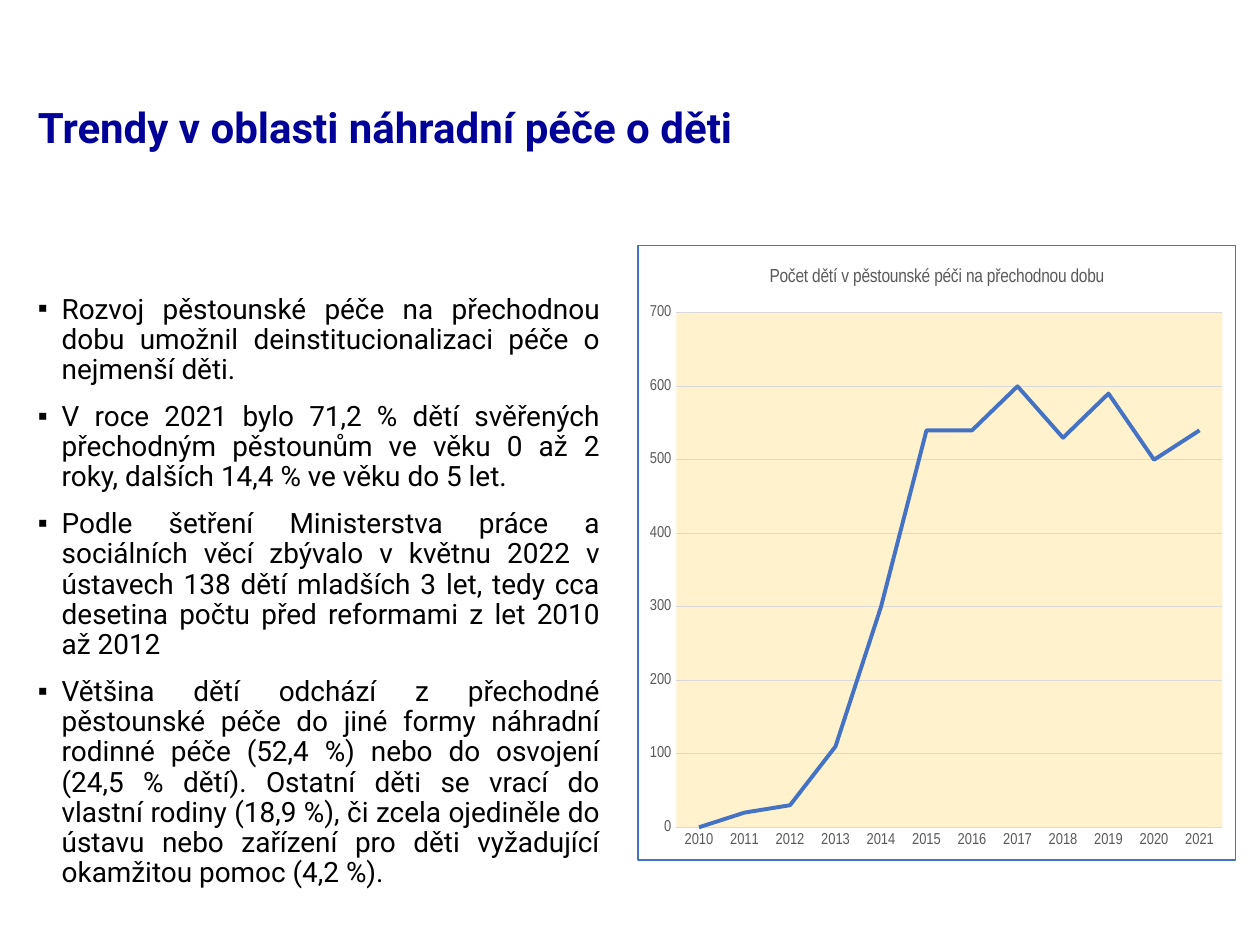
from dataclasses import dataclass

import pptx
import pptx.chart.data
import pptx.dml.color
import pptx.enum.chart
import pptx.enum.text
import pptx.oxml
import pptx.oxml.ns
import pptx.util
from pptx.util import Cm, Pt

COLORS = {
    "title": "000099",
    "text": "000000",
    "line": "4472C4",
    "plot": "FFF2CC",
    "grid": "D9D9D9",
    "label": "595959",
}
TEXT_FONT = "Roboto"
CHART_FONT = "Arial Narrow"


@dataclass
class Box:
    left: float
    top: float
    width: float
    height: float

    def lengths(self) -> tuple:
        return Cm(self.left), Cm(self.top), Cm(self.width), Cm(self.height)


TITLE_BOX = Box(0.51, 1.7, 21.44, 1.83)
BODY_BOX = Box(0.51, 5.82, 11.84, 11.18)
CHART_BOX = Box(12.85, 4.93, 12.07, 12.42)

TITLE = "Trendy v oblasti náhradní péče o děti"
BULLETS = [
    "Rozvoj pěstounské péče na přechodnou dobu umožnil "
    "deinstitucionalizaci péče o nejmenší děti.",
    "V roce 2021 bylo 71,2 % dětí svěřených přechodným pěstounům "
    "ve věku 0 až 2 roky, dalších 14,4 % ve věku do 5 let.",
    "Podle šetření Ministerstva práce a sociálních věcí zbývalo "
    "v květnu 2022 v ústavech 138 dětí mladších 3 let, tedy cca "
    "desetina počtu před reformami z let 2010 až 2012",
    "Většina dětí odchází z přechodné pěstounské péče do jiné formy "
    "náhradní rodinné péče (52,4 %) nebo do osvojení (24,5 % dětí). "
    "Ostatní děti se vrací do vlastní rodiny (18,9 %), či zcela ojediněle "
    "do ústavu nebo zařízení pro děti vyžadující okamžitou pomoc (4,2 %).",
]
CHART_TITLE = "Počet dětí v pěstounské péči na přechodnou dobu"
CHILDREN = [0, 20, 30, 110, 300, 540, 540, 600, 530, 590, 500, 540]


def color(name: str) -> pptx.dml.color.RGBColor:
    return pptx.dml.color.RGBColor.from_string(COLORS[name])


def set_font(font, name: str, size: float, color_name: str, bold: bool = False) -> None:
    font.name, font.size, font.bold = name, Pt(size), bold
    font.color.rgb = color(color_name)


def set_line(line, color_name: str, width: float) -> None:
    line.color.rgb = color(color_name)
    line.width = Pt(width)


def place(shape, box: Box) -> None:
    shape.left, shape.top, shape.width, shape.height = box.lengths()
    shape.text_frame.word_wrap = True
    shape.text_frame.auto_size = pptx.enum.text.MSO_AUTO_SIZE.NONE


def add_bullet(paragraph) -> None:
    properties = paragraph._p.get_or_add_pPr()
    properties.set("marL", str(Cm(0.48)))
    properties.set("indent", str(-Cm(0.48)))
    bullet = pptx.oxml.parse_xml(f'<a:buChar {pptx.oxml.ns.nsdecls("a")} char="▪"/>')
    properties.append(bullet)


def fill_title(shape) -> None:
    place(shape, TITLE_BOX)
    shape.text_frame.vertical_anchor = pptx.enum.text.MSO_ANCHOR.MIDDLE
    shape.text_frame.text = TITLE
    paragraph = shape.text_frame.paragraphs[0]
    paragraph.alignment = pptx.enum.text.PP_ALIGN.LEFT
    paragraph.line_spacing = 0.9
    set_font(paragraph.font, TEXT_FONT, 24, "title", bold=True)


def fill_body(shape) -> None:
    place(shape, BODY_BOX)
    shape.text_frame.text = "\n".join(BULLETS)
    for paragraph in shape.text_frame.paragraphs:
        paragraph.alignment = pptx.enum.text.PP_ALIGN.JUSTIFY
        paragraph.line_spacing = 0.9
        paragraph.space_before, paragraph.space_after = Pt(7.5), Pt(2)
        set_font(paragraph.font, TEXT_FONT, 16, "text")
        add_bullet(paragraph)


def style_axes(chart) -> None:
    for axis in (chart.category_axis, chart.value_axis):
        axis.major_tick_mark = pptx.enum.chart.XL_TICK_MARK.NONE
        set_font(axis.tick_labels.font, CHART_FONT, 9, "label")
    set_line(chart.category_axis.format.line, "grid", 0.75)
    axis = chart.value_axis
    axis.format.line.fill.background()
    axis.minimum_scale, axis.maximum_scale, axis.major_unit = 0, 700, 100
    set_line(axis.major_gridlines.format.line, "grid", 0.75)


def style_areas(chart) -> None:
    """Place and fill the plot area, and frame the whole chart."""
    names = pptx.oxml.ns.nsdecls("c", "a")
    layout = pptx.oxml.parse_xml(
        f'<c:layout {names}><c:manualLayout><c:layoutTarget val="inner"/>'
        '<c:xMode val="edge"/><c:yMode val="edge"/><c:x val="0.064"/>'
        '<c:y val="0.11"/><c:w val="0.914"/><c:h val="0.837"/>'
        "</c:manualLayout></c:layout>"
    )
    fill = pptx.oxml.parse_xml(
        f'<c:spPr {names}><a:solidFill><a:srgbClr val="{COLORS["plot"]}"/>'
        "</a:solidFill></c:spPr>"
    )
    border = pptx.oxml.parse_xml(
        f'<c:spPr {names}><a:noFill/><a:ln w="{Pt(0.75)}"><a:solidFill>'
        f'<a:srgbClr val="{COLORS["line"]}"/></a:solidFill></a:ln></c:spPr>'
    )
    space = chart._chartSpace
    plot_area = space.chart.plotArea
    for old in plot_area.findall(pptx.oxml.ns.qn("c:layout")):
        plot_area.remove(old)
    plot_area.insert(0, layout)
    plot_area.append(fill)
    space.chart.addnext(border)


def add_line_chart(slide) -> None:
    data = pptx.chart.data.CategoryChartData()
    data.categories = [str(year) for year in range(2010, 2022)]
    data.add_series("Series 1", CHILDREN)
    chart = slide.shapes.add_chart(
        pptx.enum.chart.XL_CHART_TYPE.LINE, *CHART_BOX.lengths(), data
    ).chart
    set_font(chart.font, CHART_FONT, 9, "text")
    chart.has_legend = False
    chart.has_title = True
    chart.chart_title.include_in_layout = False
    chart.chart_title.text_frame.text = CHART_TITLE
    paragraph = chart.chart_title.text_frame.paragraphs[0]
    set_font(paragraph.font, CHART_FONT, 10.8, "label")
    plot = chart.plots[0]
    plot.vary_by_categories = False
    series = plot.series[0]
    series.smooth = False
    series.marker.style = pptx.enum.chart.XL_MARKER_STYLE.NONE
    set_line(series.format.line, "line", 2.25)
    style_axes(chart)
    style_areas(chart)


def main() -> None:
    presentation = pptx.Presentation()
    presentation.slide_width, presentation.slide_height = Cm(25.4), Cm(19.05)
    # Title and Content layout
    slide = presentation.slides.add_slide(presentation.slide_layouts[1])
    fill_title(slide.shapes.title)
    fill_body(slide.placeholders[1])
    add_line_chart(slide)
    presentation.save("out.pptx")


if __name__ == "__main__":
    main()
